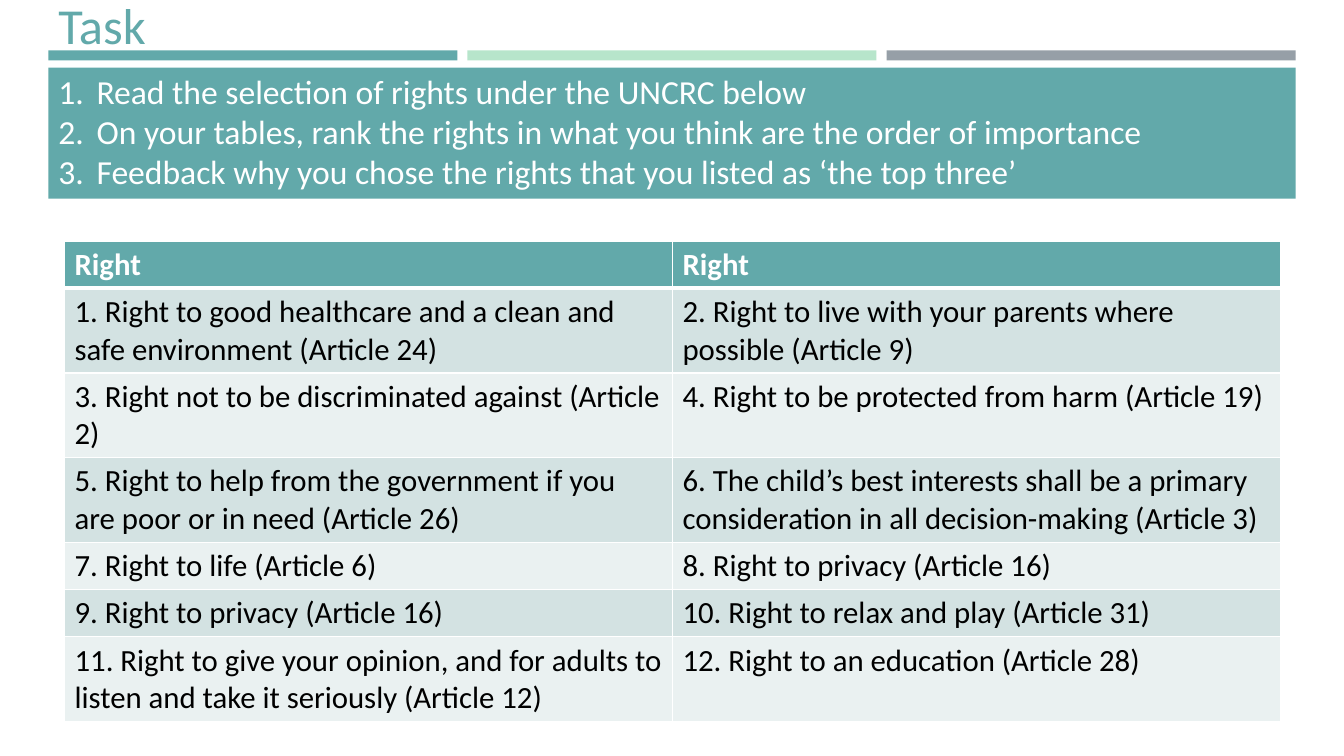
from lxml import etree
from pptx import Presentation
from pptx.dml.color import RGBColor
from pptx.enum.shapes import MSO_SHAPE
from pptx.oxml.ns import qn
from pptx.util import Inches, Pt

RECT = MSO_SHAPE.RECTANGLE
FONT = "Calibri"
TEAL, MINT, GREY, WHITE, BLACK = "62A9AA", "B7E5CB", "969FA7", "FFFFFF", "000000"
BANDS = ["D3E2E2", "EAF1F1"]
WIDE, HIGH = 13.33, 7.5
EDGE, SPAN = 0.48, 12.37
LINE, PAD = 0.37, 0.1  # height of a table text line, and a cell's two margins

STEPS = [
    "Read the selection of rights under the UNCRC below",
    "On your tables, rank the rights in what you think are the order of importance",
    "Feedback why you chose the rights that you listed as ‘the top three’",
]
# Each row: lines of text it holds, then its two cells
RIGHTS = [
    (1, "Right", "Right"),
    (2, "1. Right to good healthcare and a clean and safe environment (Article 24)",
     "2. Right to live with your parents where possible (Article 9)"),
    (2, "3. Right not to be discriminated against (Article 2)",
     "4. Right to be protected from harm (Article 19)"),
    (2, "5. Right to help from the government if you are poor or in need (Article 26)",
     "6. The child’s best interests shall be a primary consideration in all "
     "decision-making (Article 3)"),
    (1, "7. Right to life (Article 6)", "8. Right to privacy (Article 16)"),
    (1, "9. Right to privacy (Article 16)", "10. Right to relax and play (Article 31)"),
    (2, "11. Right to give your opinion, and for adults to listen and take it "
     "seriously (Article 12)", "12. Right to an education (Article 28)"),
]


def paint(target, color):
    target.fill.solid()
    target.fill.fore_color.rgb = RGBColor.from_string(color)


def style(para, size, color, bold=False):
    font = para.font
    font.name, font.size, font.bold = FONT, Pt(size), bold
    font.color.rgb = RGBColor.from_string(color)


def block(slide, box, color):
    shape = slide.shapes.add_shape(RECT, *map(Inches, box))
    shape.shadow.inherit = False
    paint(shape, color)
    shape.line.fill.background()


def write(slide, box, lines, size, color):
    frame = slide.shapes.add_textbox(*map(Inches, box)).text_frame
    frame.word_wrap = True
    frame.text = "\n".join(lines)
    for para in frame.paragraphs:
        style(para, size, color)
    return frame


def number(para, indent):
    props = para._p.get_or_add_pPr()
    props.set("marL", str(Inches(indent)))
    props.set("indent", str(-Inches(indent)))
    # The number goes ahead of the default font settings
    mark = etree.Element(qn("a:buAutoNum"), type="arabicPeriod")
    props.insert(0, mark)


def border(cell, base):
    props = cell._tc.get_or_add_tcPr()
    sides = [("L", 1), ("R", 1), ("T", 1), ("B", base)]
    for place, (side, width) in enumerate(sides):
        line = etree.Element(qn("a:ln" + side), w=str(Pt(width)))
        fill = etree.SubElement(line, qn("a:solidFill"))
        etree.SubElement(fill, qn("a:srgbClr"), val=WHITE)
        props.insert(place, line)


def header(slide, left, top, width):
    # Three bars with equal gaps, and the title above them
    gap = 0.1
    bar = (width - 2 * gap) / 3
    for col, color in enumerate([TEAL, MINT, GREY]):
        block(slide, (left + col * (bar + gap), top, bar, 0.1), color)
    write(slide, (left, top - 0.61, 7.8, 0.71), ["Task"], 36, TEAL)


def tasks(slide, left, top, width, height):
    block(slide, (left, top, width, height), TEAL)
    frame = write(slide, (left, top - 0.02, width - 0.7, height), STEPS, 24, WHITE)
    for para in frame.paragraphs:
        number(para, 0.38)


def rights(slide, left, top, width):
    heights = [count * LINE + PAD for count, *_ in RIGHTS]
    box = map(Inches, (left, top, width, sum(heights)))
    table = slide.shapes.add_table(len(RIGHTS), 2, *box).table
    for row, (_, *texts) in enumerate(RIGHTS):
        table.rows[row].height = Inches(heights[row])
        head = row == 0
        for col, text in enumerate(texts):
            cell = table.cell(row, col)
            cell.text = text
            style(cell.text_frame.paragraphs[0], 22, WHITE if head else BLACK, head)
            paint(cell, TEAL if head else BANDS[(row - 1) % 2])
            border(cell, 3 if head else 1)


def main():
    deck = Presentation()
    deck.slide_width, deck.slide_height = Inches(WIDE), Inches(HIGH)
    slide = deck.slides.add_slide(deck.slide_layouts[6])
    header(slide, EDGE, 0.5, SPAN)
    tasks(slide, EDGE, 0.67, SPAN, 1.3)
    rights(slide, 0.64, 2.39, 12.06)
    deck.save("out.pptx")


if __name__ == "__main__":
    main()
